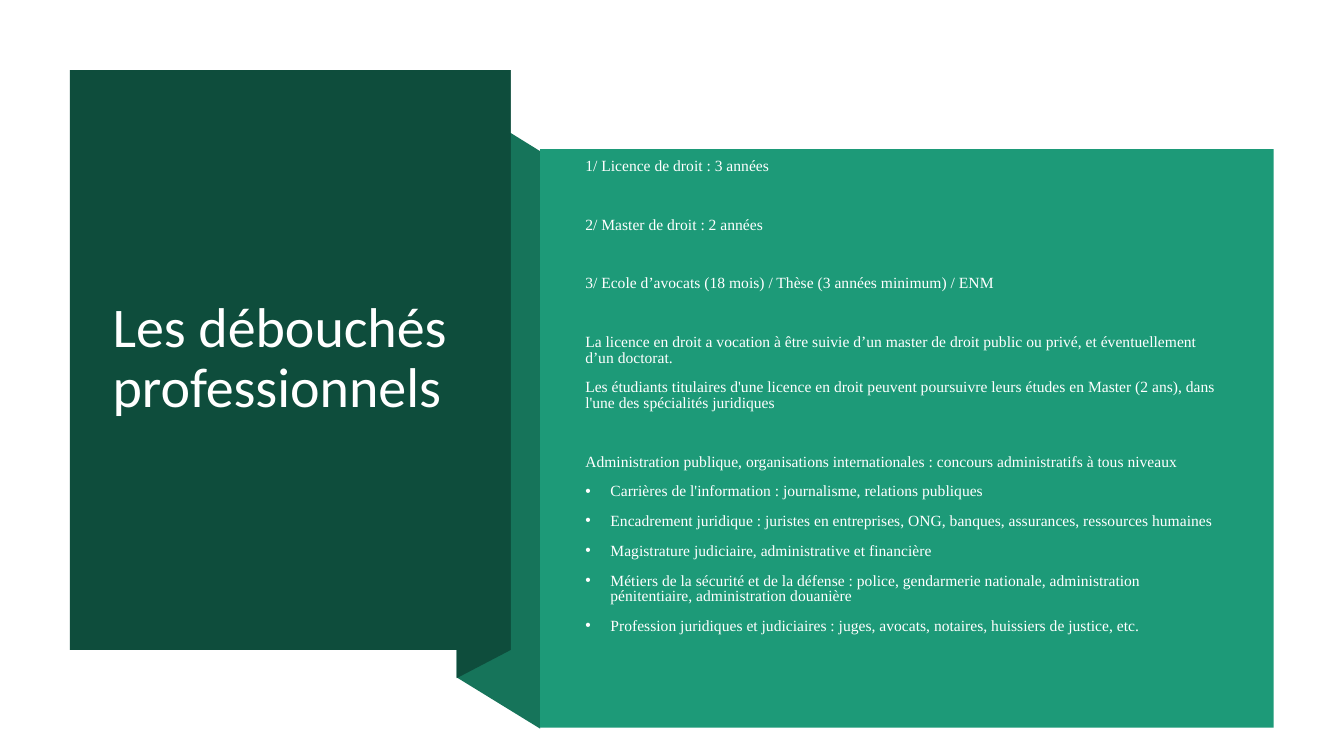
from dataclasses import dataclass

from pptx import Presentation
from pptx.dml.color import RGBColor
from pptx.enum.shapes import MSO_SHAPE
from pptx.enum.text import MSO_ANCHOR
from pptx.oxml.xmlchemy import OxmlElement
from pptx.util import Cm, Pt


@dataclass(frozen=True)
class Theme:
    dark: str = "0E4D3C"
    middle: str = "16745A"
    light: str = "1D9A78"
    white: str = "FFFFFF"
    title_font: str = "Calibri"
    body_font: str = "Times New Roman"
    title_size: float = 40
    body_size: float = 11.1
    gap: float = 10
    wide_gap: float = 30.7


@dataclass(frozen=True)
class Box:
    """A rectangle, in centimetres."""
    x: float
    y: float
    w: float
    h: float

    @property
    def right(self):
        return self.x + self.w

    @property
    def bottom(self):
        return self.y + self.h

    def inset(self, left, top, right, bottom):
        return Box(self.x + left, self.y + top,
                   self.w - left - right, self.h - top - bottom)

    def emu(self):
        return Cm(self.x), Cm(self.y), Cm(self.w), Cm(self.h)


THEME = Theme()
TITLE = "Les débouchés professionnels"

# Text, whether a wide gap precedes it, whether it has a bullet
BODY = [
    ("1/ Licence de droit : 3 années", False, False),
    ("2/ Master de droit : 2 années", True, False),
    ("3/ Ecole d’avocats (18 mois) / Thèse (3 années minimum) / ENM", True, False),
    ("La licence en droit a vocation à être suivie d’un master de droit public "
     "ou privé, et éventuellement d’un doctorat.", True, False),
    ("Les étudiants titulaires d'une licence en droit peuvent poursuivre leurs "
     "études en Master (2 ans), dans l'une des spécialités juridiques", False, False),
    ("Administration publique, organisations internationales : concours "
     "administratifs à tous niveaux", True, False),
    ("Carrières de l'information : journalisme, relations publiques", False, True),
    ("Encadrement juridique : juristes en entreprises, ONG, banques, assurances, "
     "ressources humaines", False, True),
    ("Magistrature judiciaire, administrative et financière", False, True),
    ("Métiers de la sécurité et de la défense : police, gendarmerie nationale, "
     "administration pénitentiaire, administration douanière", False, True),
    ("Profession juridiques et judiciaires : juges, avocats, notaires, huissiers "
     "de justice, etc.", False, True),
]


def paint(sp, color):
    sp.shadow.inherit = False
    sp.fill.solid()
    sp.fill.fore_color.rgb = RGBColor.from_string(color)
    sp.line.fill.background()


def add_panel(s, box, color):
    paint(s.shapes.add_shape(MSO_SHAPE.RECTANGLE, *box.emu()), color)


def add_polygon(s, points, color):
    start, *rest = [(Cm(x), Cm(y)) for x, y in points]
    builder = s.shapes.build_freeform(*start, scale=1.0)
    builder.add_line_segments(rest, close=True)
    paint(builder.convert_to_shape(), color)


def add_frame(s, box, anchor):
    tf = s.shapes.add_textbox(*box.emu()).text_frame
    tf.word_wrap = True
    tf.vertical_anchor = anchor
    return tf


def write(p, text, *, font, size, color=THEME.white, spacing=1.0, before=0,
          bullet=False):
    p.line_spacing = spacing
    p.space_before = Pt(before)
    r = p.add_run()
    r.text = text
    r.font.name = font
    r.font.size = Pt(size)
    r.font.color.rgb = RGBColor.from_string(color)
    if bullet:
        pPr = p._p.get_or_add_pPr()
        pPr.set("marL", str(Cm(0.635)))
        pPr.set("indent", str(Cm(-0.635)))
        bu_font = OxmlElement("a:buFont")
        bu_font.set("typeface", "Arial")
        bu_char = OxmlElement("a:buChar")
        bu_char.set("char", "•")
        pPr.extend([bu_font, bu_char])


def add_ribbon(s, title_box, body_box):
    """Draw the folded strip that joins the two panels."""
    inner = title_box.right - 1.36
    add_polygon(s, [(inner, body_box.y - 1.25), (body_box.x, body_box.y + 0.05),
                    (body_box.x, body_box.bottom + 0.02),
                    (inner, title_box.bottom + 0.69)], THEME.middle)
    add_polygon(s, [(inner, title_box.y), (title_box.right, title_box.y),
                    (title_box.right, title_box.bottom),
                    (inner, title_box.bottom + 0.71)], THEME.dark)


def add_title_panel(s, box):
    add_panel(s, box, THEME.dark)
    tf = add_frame(s, box.inset(0.83, 0.94, 0.86, 0.99), MSO_ANCHOR.MIDDLE)
    write(tf.paragraphs[0], TITLE, font=THEME.title_font,
          size=THEME.title_size, spacing=0.9)


def add_body_panel(s, box):
    add_panel(s, box, THEME.light)
    tf = add_frame(s, box.inset(0.89, 0.25, 1.06, 2.5), MSO_ANCHOR.TOP)
    tf.margin_top = tf.margin_bottom = 0
    for i, (text, wide, bullet) in enumerate(BODY):
        p = tf.add_paragraph() if i else tf.paragraphs[0]
        before = THEME.wide_gap if wide else THEME.gap
        write(p, text, font=THEME.body_font, size=THEME.body_size,
              spacing=0.84, before=before if i else 0, bullet=bullet)


def main():
    prs = Presentation()
    prs.slide_width, prs.slide_height = Cm(33.87), Cm(19.05)
    s = prs.slides.add_slide(prs.slide_layouts[6])
    title_box = Box(1.76, 1.77, 11.11, 14.61)
    body_box = Box(13.61, 3.76, 18.49, 14.58)
    add_ribbon(s, title_box, body_box)
    add_title_panel(s, title_box)
    add_body_panel(s, body_box)
    prs.save("out.pptx")


if __name__ == "__main__":
    main()
